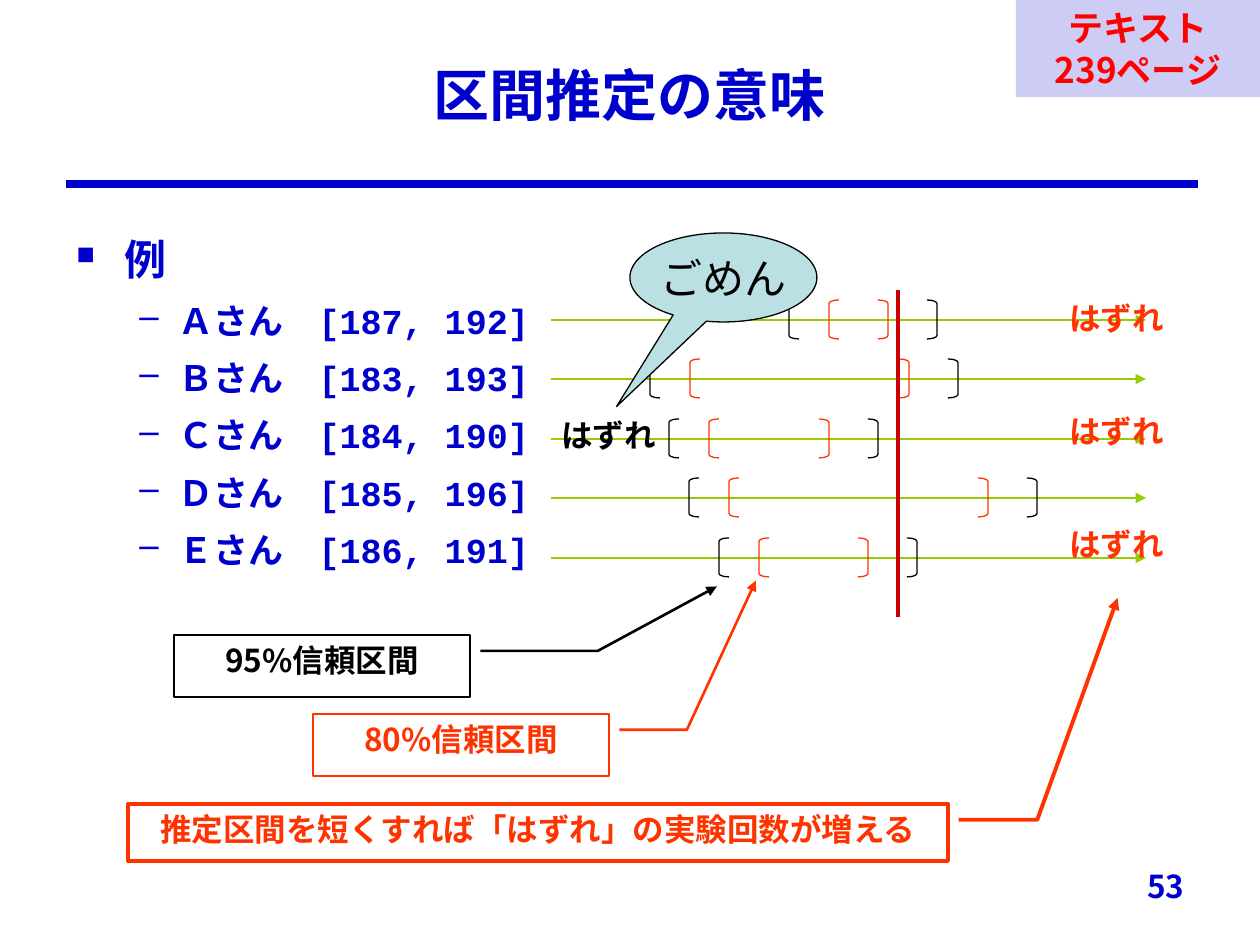
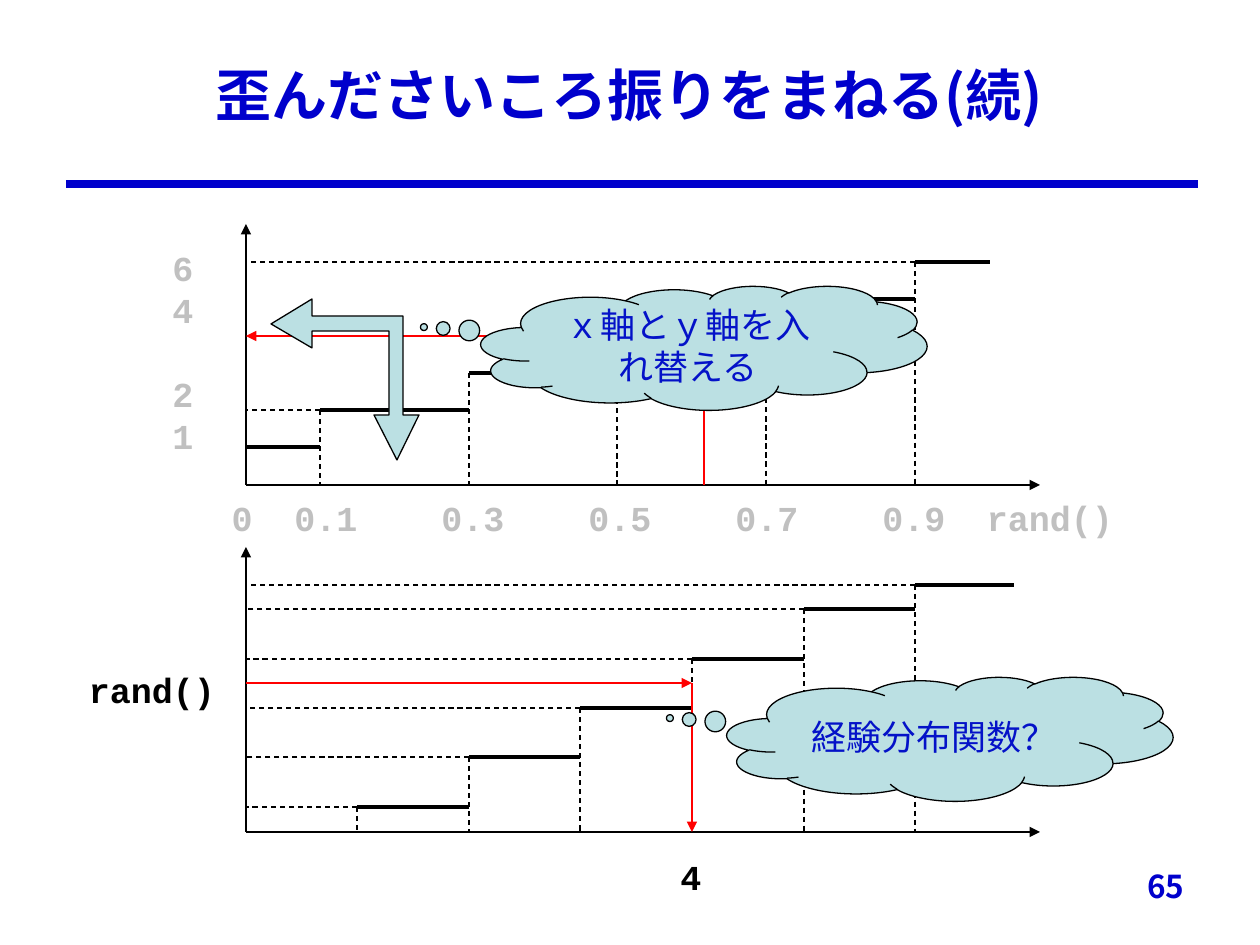
from dataclasses import dataclass

from lxml import etree
from pptx import Presentation
from pptx import util as u
from pptx.dml.color import RGBColor
from pptx.enum import dml, shapes, text
from pptx.oxml import ns

PX = 7257  # EMU per pixel, 126 pixels to the inch


@dataclass
class Theme:
    blue: str = "0000CC"
    cloud_ink: str = "0412C8"
    black: str = "000000"
    grey: str = "C0C0C0"
    red: str = "FF0000"
    orange: str = "FF3300"
    truth: str = "CC0000"
    green: str = "99CC00"
    balloon: str = "BBE0E3"
    sans: str = "Noto Sans CJK JP"
    mono: str = "Courier New"
    serif: str = "Times New Roman"
    title: int = 32
    lead: int = 24
    body: int = 20
    small: int = 18
    hair: float = 0.75
    medium: float = 1.5
    bold: float = 2.25
    rule: float = 4.5


T = Theme()
SHAPE = shapes.MSO_SHAPE
ALIGN = text.PP_ALIGN


def draw(slide, kind, box, color, width, fill=None, adjust=(), dash=False, arrow=False):
    """Add a line (kind None, box holds both ends), a polygon or a preset shape."""
    if kind is None:
        part = slide.shapes.add_connector(
            shapes.MSO_CONNECTOR.STRAIGHT, *[v * PX for v in box])
    elif kind == "polygon":
        builder = slide.shapes.build_freeform(*box[0], scale=PX)
        builder.add_line_segments(box[1:], close=True)
        part = builder.convert_to_shape()
    else:
        part = slide.shapes.add_shape(kind, *[v * PX for v in box])
    for index, value in enumerate(adjust):
        part.adjustments[index] = value
    if fill:
        part.fill.solid()
        part.fill.fore_color.rgb = RGBColor.from_string(fill)
    elif kind is not None:
        part.fill.background()
    if width:
        part.line.color.rgb = RGBColor.from_string(color)
        part.line.width = u.Pt(width)
    else:
        part.line.fill.background()
    if dash:
        part.line.dash_style = dml.MSO_LINE.DASH
    if arrow:
        outline = part._element.spPr.find(ns.qn("a:ln"))
        etree.SubElement(outline, ns.qn("a:tailEnd"), type="triangle")
    if kind is None:
        etree.SubElement(part._element.spPr, ns.qn("a:effectLst"))
    else:
        part.shadow.inherit = False
    return part


def write(part, words, size, color, font=T.sans, bold=True, align=ALIGN.CENTER,
          anchor=text.MSO_ANCHOR.TOP, wrap=True):
    """Fill a shape with text, one paragraph per line, and format it."""
    frame = part.text_frame
    frame.text = words
    frame.word_wrap = wrap
    frame.auto_size = text.MSO_AUTO_SIZE.NONE
    frame.vertical_anchor = anchor
    for paragraph in frame.paragraphs:
        paragraph.alignment = align
        paragraph.line_spacing = u.Pt(size * 1.2)
        for run in paragraph.runs:
            run.font.size = u.Pt(size)
            run.font.bold = bold
            run.font.color.rgb = RGBColor.from_string(color)
            run.font.name = font
            etree.SubElement(run.font._element, ns.qn("a:ea"), typeface=T.sans)
    return frame.paragraphs


deck = Presentation()
deck.slide_width, deck.slide_height = u.Inches(10), u.Inches(7.5)

# Shared frame: title, rule and page number
pages = []
for heading, number in (("区間推定の意味", "53"), ("歪んださいころ振りをまねる(続)", "65")):
    page = deck.slides.add_slide(deck.slide_layouts[5])
    title = page.shapes.title
    title.left, title.top, title.width, title.height = [v * PX for v in (94, 19, 1071, 150)]
    write(title, heading, T.title, T.blue, anchor=text.MSO_ANCHOR.MIDDLE)[0].line_spacing = 1.0
    draw(page, None, (66, 184, 1198, 184), T.blue, T.rule)
    folio = page.shapes.add_textbox(*[v * PX for v in (935, 861, 262, 63)])
    write(folio, number, T.small, T.blue, align=ALIGN.RIGHT)
    pages.append(page)
intervals, dice = pages

# Slide 53: people with their intervals, and bracket ends (95% left, 95% right)
people = [
    ("Ａさん", "[187, 192]", 789, 927),
    ("Ｂさん", "[183, 193]", 650, 948),
    ("Ｃさん", "[184, 190]", 669, 868),
    ("Ｄさん", "[185, 196]", 689, 1027),
    ("Ｅさん", "[186, 191]", 719, 907),
]

# Bullet list
examples = intervals.shapes.add_textbox(*[v * PX for v in (64, 217, 1139, 400)])
names = "\n".join(["例"] + [person[0] + "\u3000".strip("\n") for person in people])
lead, *entries = write(examples, names, T.body, T.blue, align=ALIGN.LEFT)
lead.runs[0].font.size = u.Pt(T.lead)
lead.line_spacing = u.Pt(T.lead * 1.44)
for entry, person in zip(entries, people):
    entry.line_spacing = u.Pt(T.body * 1.44)
    entry.space_before = u.Pt(4)
    span = entry.add_run()
    span.text = person[1]
    span.font.size = u.Pt(T.body)
    span.font.bold = True
    span.font.name = T.mono
    span.font.color.rgb = RGBColor.from_string(T.blue)
for item in [lead, *entries]:
    margin, hang, mark = (48, 48, "■") if item is lead else (102, 39, "–")
    props = item._p.get_or_add_pPr()
    props.set("marL", str(margin * PX))
    props.set("indent", str(-hang * PX))
    if item is lead:
        etree.SubElement(props, ns.qn("a:buSzPct"), val="60000")
    etree.SubElement(props, ns.qn("a:buChar"), char=mark)

# Number lines with both confidence intervals; the 80% one lies inside
for row, (_, _, left, right) in enumerate(people):
    y = 320 + 119 * row // 2
    draw(intervals, None, (551, y, 1146, y), T.green, T.hair, arrow=True)
    for start, end, color in ((left, right, T.black), (left + 40, right - 49, T.orange)):
        for bracket, x in ((SHAPE.LEFT_BRACKET, start), (SHAPE.RIGHT_BRACKET, end)):
            draw(intervals, bracket, (x, y - 20, 10, 39), color, T.hair, adjust=[0.335])
draw(intervals, None, (898, 290, 898, 617), T.truth, T.bold)

# Misses beside the lines
for words, x, y, color in (("はずれ\nはずれ\nはずれ", 1057, 293, T.orange),
                           ("はずれ", 549, 410, T.black)):
    misses = intervals.shapes.add_textbox(x * PX, y * PX, 128 * PX, 50 * PX)
    for miss in write(misses, words, T.small, color, T.serif, align=ALIGN.LEFT)[1:]:
        miss.space_before = u.Pt(43)

# Callouts with leader arrows
callouts = [
    ("推定区間を短くすれば「はずれ」の実験回数が増える", (128, 804, 820, 57), T.orange, T.bold,
     T.serif, (0.277, 1.013, 0.277, 1.109, -3.615, 1.207)),
    ("95%信頼区間", (174, 635, 296, 62), T.black, T.medium,
     T.sans, (0.256, 1.035, 0.256, 1.432, -0.783, 1.834)),
    ("80%信頼区間", (313, 714, 296, 62), T.orange, T.medium,
     T.sans, (0.256, 1.035, 0.256, 1.263, -2.149, 1.496)),
]
for words, box, color, width, font, leader in callouts:
    callout = draw(intervals, SHAPE.LINE_CALLOUT_2, box, color, width,
                   adjust=leader, arrow=True)
    write(callout, words, T.small, color, font)

# Apology balloon
apology = draw(intervals, SHAPE.OVAL_CALLOUT, (630, 233, 187, 89), T.black, T.hair,
               T.balloon, (-0.572, 1.451))
write(apology, "ごめん", T.lead, T.black, T.mono, bold=False,
      anchor=text.MSO_ANCHOR.MIDDLE, wrap=False)

# Textbook reference in the corner
reference = draw(intervals, SHAPE.RECTANGLE, (1016, 0, 244, 97), None, 0, T.blue)
tint = reference._element.spPr.find(ns.qn("a:solidFill"))[0]
etree.SubElement(tint, ns.qn("a:alpha"), val="20000")
write(reference, "テキスト\n239ページ", T.body, T.red)

# Slide 65: two step charts (axis top, base, step edges, levels, levels with a guide, path)
ORIGIN = 246
charts = [
    (224, 485, [246, 320, 469, 617, 766, 915, 990], [447, 410, 373, 336, 299, 262],
     (410, 262), [(704, 485), (704, 336), (ORIGIN, 336)]),
    (547, 832, [357, 469, 580, 692, 804, 915, 1014], [807, 757, 708, 659, 609, 585],
     (807, 757, 708, 659, 609, 585), [(ORIGIN, 683), (692, 683), (692, 832)]),
]
for top, base, edges, levels, guided, lookup in charts:
    draw(dice, None, (ORIGIN, base, 1040, base), T.black, T.medium, arrow=True)
    draw(dice, None, (ORIGIN, base, ORIGIN, top), T.black, T.medium, arrow=True)
    for left, right, level in zip(edges, edges[1:], levels):
        if left > ORIGIN:
            draw(dice, None, (left, level, left, base), T.black, T.hair, dash=True)
        if level in guided:
            draw(dice, None, (left, level, ORIGIN, level), T.black, T.hair, dash=True)
        draw(dice, None, (left, level, right, level), T.black, T.bold)
    for start, end in zip(lookup, lookup[1:]):
        draw(dice, None, (*start, *end), T.red, T.hair, arrow=True)

# Axis labels, each centred on x
labels = [("0", 242, 490, T.grey), ("rand()", 1050, 490, T.grey),
          ("rand()", 152, 662, T.black), ("4", 691, 849, T.black),
          ("6\n4\n2\n1", 183, 240, T.grey)]
labels += [(f"0.{2 * step + 1}", 326 + 147 * step, 490, T.grey) for step in range(5)]
for words, x, y, color in labels:
    label = dice.shapes.add_textbox((x - 80) * PX, y * PX, 160 * PX, 54 * PX)
    for line in write(label, words, T.body, color, T.mono):
        if line.text == "2":
            line.space_before = u.Pt(T.body * 1.2)

# Double arrow that swaps the axes
swap = [(271, 324), (312, 348), (312, 331), (389, 331), (389, 415), (374, 415),
        (397, 460), (419, 415), (403, 415), (403, 316), (312, 316), (312, 299)]
draw(dice, "polygon", swap, T.black, T.hair, T.balloon)

# Thought clouds
for words, x, y in (("ｘ軸とｙ軸を入れ替える", 481, 286), ("経験分布関数？", 727, 677)):
    cloud = draw(dice, SHAPE.CLOUD_CALLOUT, (x, y, 446, 124), T.black, T.hair,
                 T.balloon, (-0.628, -0.168))
    write(cloud, words, T.body, T.cloud_ink, bold=False, anchor=text.MSO_ANCHOR.MIDDLE)

deck.save("out.pptx")
